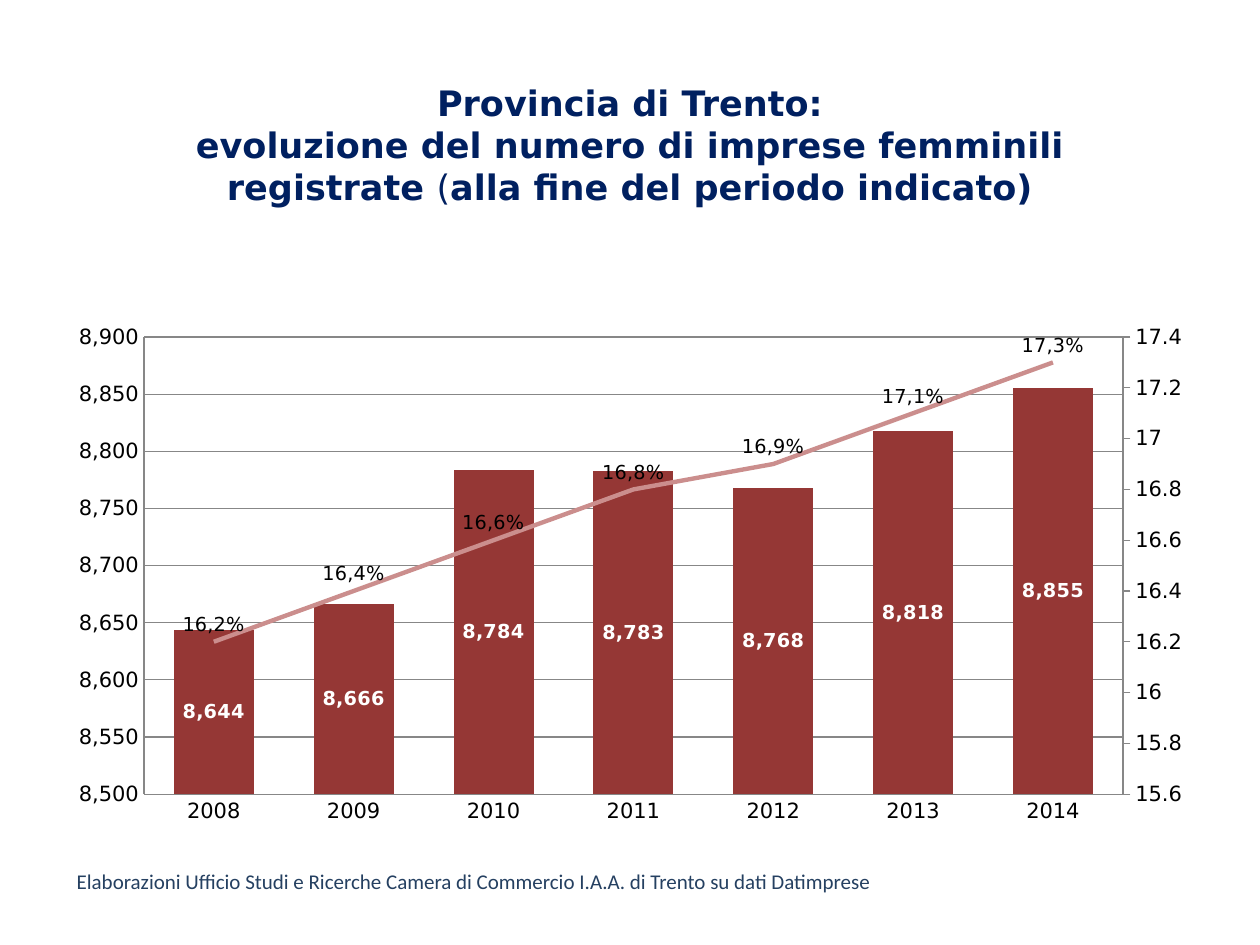
from dataclasses import dataclass

from lxml.etree import SubElement
from pptx import Presentation
from pptx.chart.data import CategoryChartData
from pptx.dml.color import RGBColor
from pptx.enum.chart import XL_CHART_TYPE, XL_LABEL_POSITION, XL_TICK_MARK
from pptx.enum.text import MSO_ANCHOR, PP_ALIGN
from pptx.oxml import parse_xml
from pptx.oxml.ns import nsdecls, qn
from pptx.util import Inches, Pt


@dataclass(frozen=True)
class Theme:
    heading_font: str = "DejaVu Sans"
    body_font: str = "Calibri"
    title_size: int = 20
    text_size: int = 12
    label_size: int = 11
    navy: str = "002060"
    source_blue: str = "254061"
    bar_red: str = "953735"
    line_pink: str = "CB8E8D"
    grid_gray: str = "878787"
    black: str = "000000"
    white: str = "FFFFFF"


THEME = Theme()
SLIDE_WIDTH, SLIDE_HEIGHT = 10, 7.5

TITLE_LINES = [
    [("Provincia di Trento:", True)],
    [
        ("evoluzione del numero di imprese femminili registrate ", True),
        ("(", False),
        ("alla fine del periodo indicato)", True),
    ],
]
SOURCE = "Elaborazioni Ufficio Studi e Ricerche Camera di Commercio I.A.A. di Trento su dati Datimprese"
YEARS = ["2008", "2009", "2010", "2011", "2012", "2013", "2014"]
COMPANIES = [8644, 8666, 8784, 8783, 8768, 8818, 8855]
SHARES = [16.2, 16.4, 16.6, 16.8, 16.9, 17.1, 17.3]

TITLE_BOX = (0.075, 0.048, 0.85, 0.209)
CHART_BOX = (0.044, 0.332, 0.912, 0.551)
SOURCE_BOX = (0.051, 0.913, 0.699, 0.04)
PLOT_AREA = {"x": 0.077, "y": 0.045, "w": 0.852, "h": 0.878}

SECONDARY_AXES = f"""<c:axes {nsdecls("c")}>
<c:catAx><c:axId val="3001"/><c:scaling><c:orientation val="minMax"/></c:scaling>
<c:delete val="1"/><c:axPos val="b"/><c:crossAx val="3002"/><c:crosses val="autoZero"/></c:catAx>
<c:valAx><c:axId val="3002"/><c:scaling><c:orientation val="minMax"/></c:scaling>
<c:delete val="0"/><c:axPos val="r"/><c:numFmt formatCode="General" sourceLinked="0"/>
<c:majorTickMark val="out"/><c:minorTickMark val="none"/><c:tickLblPos val="nextTo"/>
<c:crossAx val="3001"/><c:crosses val="max"/><c:crossBetween val="between"/></c:valAx>
</c:axes>"""


def place(box):
    left, top, width, height = box
    return (
        Inches(left * SLIDE_WIDTH),
        Inches(top * SLIDE_HEIGHT),
        Inches(width * SLIDE_WIDTH),
        Inches(height * SLIDE_HEIGHT),
    )


def style_font(font, name, size, color, bold=False):
    font.name = name
    font.size = Pt(size)
    font.bold = bold
    font.color.rgb = RGBColor.from_string(color)


def style_line(line, color, width):
    line.color.rgb = RGBColor.from_string(color)
    line.width = Pt(width)


def style_axis(axis, tick_mark):
    axis.major_tick_mark = tick_mark
    axis.minor_tick_mark = XL_TICK_MARK.NONE
    style_font(axis.tick_labels.font, THEME.heading_font, THEME.text_size, THEME.black)
    style_line(axis.format.line, THEME.grid_gray, 0.75)


def scale_axis(axis, minimum, maximum, step):
    axis.minimum_scale, axis.maximum_scale, axis.major_unit = minimum, maximum, step


def add_title(slide):
    title = slide.shapes.title
    title.left, title.top, title.width, title.height = place(TITLE_BOX)
    frame = title.text_frame
    frame.vertical_anchor = MSO_ANCHOR.MIDDLE
    paragraph = frame.paragraphs[0]
    paragraph.alignment = PP_ALIGN.CENTER
    for number, line in enumerate(TITLE_LINES):
        if number:
            paragraph.add_line_break()
        for text, bold in line:
            run = paragraph.add_run()
            run.text = text
            style_font(run.font, THEME.heading_font, THEME.title_size, THEME.navy, bold)


def move_shares_to_line(chart):
    plot_area = chart._chartSpace.chart.plotArea
    bar_chart = plot_area.find(qn("c:barChart"))
    series = bar_chart.findall(qn("c:ser"))[1]
    for bar_setting in series.findall(qn("c:invertIfNegative")):
        series.remove(bar_setting)
    line_chart = parse_xml(
        f'<c:lineChart {nsdecls("c")}><c:grouping val="standard"/><c:varyColors val="0"/>'
        '<c:marker val="1"/><c:axId val="3001"/><c:axId val="3002"/></c:lineChart>'
    )
    line_chart.insert(2, series)
    bar_chart.addnext(line_chart)
    last_axis = plot_area.findall(qn("c:valAx"))[-1]
    for axis in reversed(list(parse_xml(SECONDARY_AXES))):
        last_axis.addnext(axis)


def set_plot_area(chart):
    plot_area = chart._chartSpace.chart.plotArea
    for old_layout in plot_area.findall(qn("c:layout")):
        plot_area.remove(old_layout)
    layout = parse_xml(f'<c:layout {nsdecls("c")}><c:manualLayout/></c:layout>')
    settings = {"layoutTarget": "inner", "xMode": "edge", "yMode": "edge", **PLOT_AREA}
    for name, value in settings.items():
        SubElement(layout[0], qn(f"c:{name}")).set("val", str(value))
    plot_area.insert(0, layout)


def style_bars(plot):
    plot.vary_by_categories = False
    plot.gap_width, plot.overlap = 75, 40
    bars = plot.series[0]
    bars.invert_if_negative = False
    bars.format.fill.solid()
    bars.format.fill.fore_color.rgb = RGBColor.from_string(THEME.bar_red)
    labels = bars.data_labels
    labels.show_value = True
    labels.number_format, labels.number_format_is_linked = "#,##0", False
    labels.position = XL_LABEL_POSITION.CENTER
    style_font(labels.font, THEME.heading_font, THEME.label_size, THEME.white, True)


def style_share_line(plot):
    line = plot.series[0]
    line.smooth = False
    style_line(line.format.line, THEME.line_pink, 2.5)
    marker = parse_xml(f'<c:marker {nsdecls("c")}><c:symbol val="none"/></c:marker>')
    line._element.find(qn("c:spPr")).addnext(marker)
    for number, share in enumerate(SHARES):
        label = line.points[number].data_label
        run = label.text_frame.paragraphs[0].add_run()
        run.text = f"{share}%".replace(".", ",")
        style_font(run.font, THEME.heading_font, THEME.label_size, THEME.black)
        label.position = XL_LABEL_POSITION.ABOVE


def add_companies_chart(slide):
    data = CategoryChartData()
    data.categories = YEARS
    data.add_series("Series 1", COMPANIES)
    data.add_series("Series 2", SHARES)
    chart = slide.shapes.add_chart(
        XL_CHART_TYPE.COLUMN_CLUSTERED, *place(CHART_BOX), data
    ).chart
    chart.has_legend = chart.has_title = False
    style_font(chart.font, THEME.body_font, 10, THEME.black)
    style_axis(chart.category_axis, XL_TICK_MARK.NONE)
    left_axis = chart.value_axis
    style_axis(left_axis, XL_TICK_MARK.NONE)
    scale_axis(left_axis, 8500, 8900, 50)
    left_axis.tick_labels.number_format = "#,##0"
    left_axis.tick_labels.number_format_is_linked = False
    style_line(left_axis.major_gridlines.format.line, THEME.grid_gray, 0.75)
    move_shares_to_line(chart)
    set_plot_area(chart)
    right_axis = type(left_axis)(chart._chartSpace.valAx_lst[1])
    style_axis(right_axis, XL_TICK_MARK.OUTSIDE)
    scale_axis(right_axis, 15.6, 17.4, 0.2)
    bar_plot, line_plot = chart.plots
    style_bars(bar_plot)
    style_share_line(line_plot)


def add_source(slide):
    frame = slide.shapes.add_textbox(*place(SOURCE_BOX)).text_frame
    frame.word_wrap = True
    run = frame.paragraphs[0].add_run()
    run.text = SOURCE
    style_font(run.font, THEME.body_font, THEME.text_size, THEME.source_blue)


def main():
    presentation = Presentation()
    presentation.slide_width = Inches(SLIDE_WIDTH)
    presentation.slide_height = Inches(SLIDE_HEIGHT)
    slide = presentation.slides.add_slide(presentation.slide_layouts[5])
    add_title(slide)
    add_companies_chart(slide)
    add_source(slide)
    presentation.save("out.pptx")


if __name__ == "__main__":
    main()
